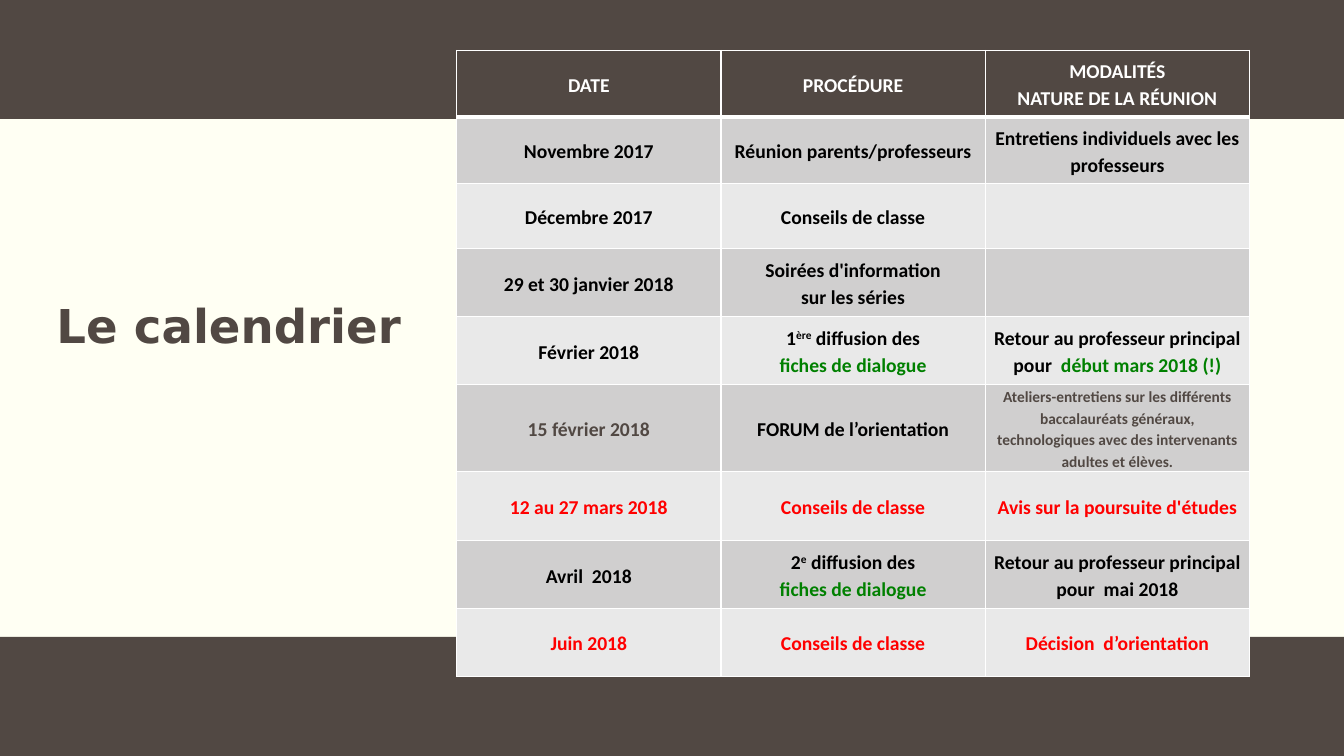
import pptx
import pptx.dml.color
import pptx.enum.shapes
import pptx.enum.text
import pptx.oxml
import pptx.oxml.ns
import pptx.util
from pptx.util import Cm

BROWN, CREAM, WHITE, BLACK = "514843", "FFFFF3", "FFFFFF", "000000"
RED, GREEN, DARK_GREY, LIGHT_GREY = "FF0000", "008000", "D0CFCF", "E9E9E9"
SLIDE_W, SLIDE_H, BAND_H = 33.87, 19.05, 3.0
COL_W = 6.66
SUP = "sup"

# Each row: height in cm, text colour, cells. A cell is a list of paragraphs,
# a paragraph is a list of (text, style) runs or a plain string.
DIALOGUE = [("fiches de dialogue", GREEN)]
ROWS = [
    (1.67, WHITE, [["DATE"], ["PROCÉDURE"], ["MODALITÉS", "NATURE DE LA RÉUNION"]]),
    (1.69, BLACK, [["Novembre 2017"], ["Réunion parents/professeurs"],
                   ["Entretiens individuels avec les professeurs"]]),
    (1.64, BLACK, [["Décembre 2017"], ["Conseils de classe"], []]),
    (1.71, BLACK, [["29 et 30 janvier 2018"],
                   ["Soirées d'information", "sur les séries"], []]),
    (1.71, BLACK, [["Février 2018"],
                   [[("1", None), ("ère", SUP), (" diffusion des", None)], DIALOGUE],
                   [[("Retour au professeur principal pour  ", None),
                     ("début mars 2018 (!)", GREEN)]]]),
    (1.98, BROWN, [["15 février 2018"], [[("FORUM de l’orientation", BLACK)]],
                   ["Ateliers-entretiens sur les différents baccalauréats généraux, "
                    "technologiques avec des intervenants adultes et élèves."]]),
    (1.73, RED, [["12 au 27 mars 2018"], ["Conseils de classe"],
                 ["Avis sur la poursuite d'études"]]),
    (1.71, BLACK, [["Avril  2018"],
                   [[("2", None), ("e", SUP), (" diffusion des", None)], DIALOGUE],
                   ["Retour au professeur principal pour  mai 2018"]]),
    (1.71, RED, [["Juin 2018"], ["Conseils de classe"], ["Décision  d’orientation"]]),
]
SMALL_CELL = (5, 2)


def rgb(value):
    return pptx.dml.color.RGBColor.from_string(value)


def set_font(font, name, size, color):
    font.name, font.size, font.bold = name, pptx.util.Pt(size), True
    font.color.rgb = rgb(color)


def add_band(slide, top):
    sp = slide.shapes.add_shape(pptx.enum.shapes.MSO_SHAPE.RECTANGLE,
                                0, Cm(top), Cm(SLIDE_W), Cm(BAND_H))
    sp.shadow.inherit = False
    sp.fill.solid()
    sp.fill.fore_color.rgb = rgb(BROWN)
    sp.line.fill.background()


def set_title(slide, text):
    sp = slide.shapes.title
    sp.left, sp.top, sp.width, sp.height = Cm(1.42), Cm(7.52), Cm(9.12), Cm(2.67)
    tf = sp.text_frame
    tf.text = text
    tf.word_wrap = True
    tf.auto_size = pptx.enum.text.MSO_AUTO_SIZE.NONE
    tf.vertical_anchor = pptx.enum.text.MSO_ANCHOR.TOP
    tf.margin_left = tf.margin_right = 0
    p = tf.paragraphs[0]
    p.alignment = pptx.enum.text.PP_ALIGN.LEFT
    p.line_spacing = 0.9
    set_font(p.font, "DejaVu Sans", 33.3, BROWN)


def set_borders(cell, widths):
    tc_pr = cell._tc.get_or_add_tcPr()
    for i, (side, width) in enumerate(widths.items()):
        tc_pr.insert(i, pptx.oxml.parse_xml(
            f'<a:ln{side} {pptx.oxml.ns.nsdecls("a")} w="{pptx.util.Pt(width)}">'
            f'<a:solidFill><a:srgbClr val="{WHITE}"/></a:solidFill></a:ln{side}>'))


def fill_paragraph(p, content, size, color):
    runs = [(content, None)] if isinstance(content, str) else content
    p.alignment = pptx.enum.text.PP_ALIGN.CENTER
    p.line_spacing = 1.15
    set_font(p.font, "Calibri", size, color)
    for text, style in runs:
        r = p.add_run()
        r.text = text
        if style == SUP:
            r._r.get_or_add_rPr().set("baseline", "30000")
        elif style:
            r.font.color.rgb = rgb(style)


def fill_cell(cell, paragraphs, size, color, fill):
    cell.fill.solid()
    cell.fill.fore_color.rgb = rgb(fill)
    cell.vertical_anchor = pptx.enum.text.MSO_ANCHOR.MIDDLE
    cell.margin_left = cell.margin_right = Cm(0.1)
    cell.margin_top = cell.margin_bottom = 0
    tf = cell.text_frame
    for i, content in enumerate(paragraphs):
        p = tf.add_paragraph() if i else tf.paragraphs[0]
        fill_paragraph(p, content, size, color)


def add_calendar(slide):
    height = sum(row[0] for row in ROWS)
    table = slide.shapes.add_table(len(ROWS), 3, Cm(11.51), Cm(1.27),
                                   Cm(3 * COL_W), Cm(height)).table
    table.horz_banding = False
    for col in table.columns:
        col.width = Cm(COL_W)
    for i, (row_h, color, cells) in enumerate(ROWS):
        table.rows[i].height = Cm(row_h)
        fill = BROWN if i == 0 else DARK_GREY if i % 2 else LIGHT_GREY
        borders = {"L": 1, "R": 1, "T": 3 if i == 1 else 1, "B": 3 if i == 0 else 1}
        for j, paragraphs in enumerate(cells):
            cell = table.cell(i, j)
            size = 11 if (i, j) == SMALL_CELL else 14
            fill_cell(cell, paragraphs, size, color, fill)
            set_borders(cell, borders)


def main():
    """Build the orientation calendar slide."""
    prs = pptx.Presentation()
    prs.slide_width, prs.slide_height = Cm(SLIDE_W), Cm(SLIDE_H)
    slide = prs.slides.add_slide(prs.slide_layouts[5])
    slide.background.fill.solid()
    slide.background.fill.fore_color.rgb = rgb(CREAM)
    for top in (0, SLIDE_H - BAND_H):
        add_band(slide, top)
    set_title(slide, "Le calendrier")
    add_calendar(slide)
    prs.save("out.pptx")


if __name__ == "__main__":
    main()
